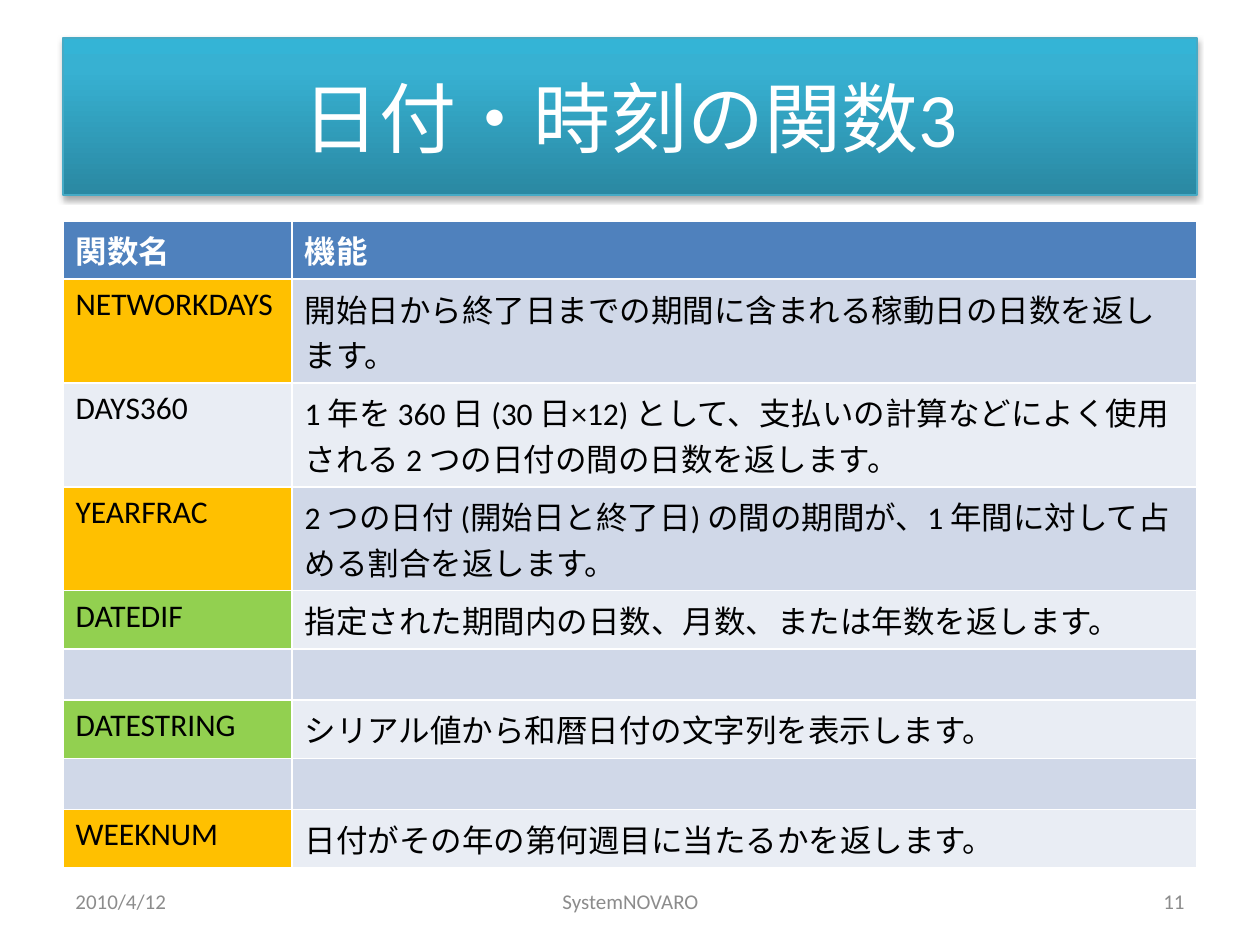
import copy

import pptx
import pptx.dml.color
import pptx.enum.text
import pptx.oxml
import pptx.oxml.ns
import pptx.util

PX = 914400 // 126
FONT = "Calibri"
ALIGN = pptx.enum.text.PP_ALIGN
MIDDLE = pptx.enum.text.MSO_ANCHOR.MIDDLE

COLORS = {
    "white": "FFFFFF",
    "black": "000000",
    "header": "4F81BD",
    "band_dark": "D0D8E8",
    "band_light": "E9EDF4",
    "orange": "FFC000",
    "green": "92D050",
    "title_line": "46AAC5",
    "footer": "8C8C8C",
}
TITLE_GRADIENT = [(0, "2A88A2"), (0.8, "37B1D2"), (1, "34B4D6")]

HEADINGS = ("関数名", "機能")
# Function name, description, colour of the name cell (None follows the band)
FUNCTIONS = [
    ("NETWORKDAYS", "開始日から終了日までの期間に含まれる稼動日の日数を返します。", "orange"),
    ("DAYS360", "1 年を 360 日 (30 日×12) として、支払いの計算などによく使用される "
                "2 つの日付の間の日数を返します。", None),
    ("YEARFRAC", "2 つの日付 (開始日と終了日) の間の期間が、1 年間に対して占める割合を返します。", "orange"),
    ("DATEDIF", "指定された期間内の日数、月数、または年数を返します。", "green"),
    ("", "", None),
    ("DATESTRING", "シリアル値から和暦日付の文字列を表示します。", "green"),
    ("", "", None),
    ("WEEKNUM", "日付がその年の第何週目に当たるかを返します。", "orange"),
]
FOOTERS = [
    ("2010/4/12", 63, 294, ALIGN.LEFT),
    ("SystemNOVARO", 431, 399, ALIGN.CENTER),
    ("11", 903, 294, ALIGN.RIGHT),
]


def px(length):
    return pptx.util.Emu(length * PX)


def rgb(name):
    return pptx.dml.color.RGBColor.from_string(COLORS[name])


def style_paragraph(paragraph, size, color, align=ALIGN.LEFT, bold=False):
    paragraph.alignment = align
    paragraph.font.name = FONT
    paragraph.font.size = pptx.util.Pt(size)
    paragraph.font.bold = bold
    paragraph.font.color.rgb = rgb(color)


def fill_title_gradient(title):
    """Give the title a three-stop gradient that runs from bottom to top."""
    title.fill.gradient()
    title.fill.gradient_angle = 90
    stop_list = title.fill.gradient_stops[0]._gs.getparent()
    stop_list.append(copy.deepcopy(stop_list[-1]))
    for stop, (position, color) in zip(title.fill.gradient_stops, TITLE_GRADIENT):
        stop.position = position
        stop.color.rgb = pptx.dml.color.RGBColor.from_string(color)


def add_drop_shadow(shape):
    shape.shadow.inherit = False
    effects = shape._element.spPr.find(pptx.oxml.ns.qn("a:effectLst"))
    effects.append(pptx.oxml.parse_xml(
        f'<a:outerShdw {pptx.oxml.ns.nsdecls("a")} blurRad="40000" dist="23000" '
        'dir="5400000" rotWithShape="0"><a:srgbClr val="000000">'
        '<a:alpha val="35000"/></a:srgbClr></a:outerShdw>'))


def format_title(title):
    title.left, title.top, title.width, title.height = map(px, (63, 38, 1134, 157))
    fill_title_gradient(title)
    title.line.color.rgb = rgb("title_line")
    title.line.width = pptx.util.Pt(0.75)
    add_drop_shadow(title)
    title.text_frame.text = "日付・時刻の関数3"
    title.text_frame.vertical_anchor = MIDDLE
    style_paragraph(title.text_frame.paragraphs[0], 44, "white", ALIGN.CENTER)


def fill_cell(cell, text, fill, color="black", bold=False):
    cell.text = text
    cell.fill.solid()
    cell.fill.fore_color.rgb = rgb(fill)
    style_paragraph(cell.text_frame.paragraphs[0], 18, color, bold=bold)


def add_function_table(slide):
    row_count = len(FUNCTIONS) + 1
    row_height = 51
    table = slide.shapes.add_table(row_count, 2, px(63), px(221), px(1134),
                                   px(row_height * row_count)).table
    for column, width in zip(table.columns, (229, 905)):
        column.width = px(width)
    for column, heading in enumerate(HEADINGS):
        fill_cell(table.cell(0, column), heading, "header", "white", bold=True)
    for row, (name, description, highlight) in enumerate(FUNCTIONS, start=1):
        band = "band_dark" if row % 2 else "band_light"
        fill_cell(table.cell(row, 0), name, highlight or band)
        fill_cell(table.cell(row, 1), description, band)


def add_footer(slide, text, left, width, align):
    frame = slide.shapes.add_textbox(px(left), px(876), px(width), px(50)).text_frame
    frame.word_wrap = True
    frame.vertical_anchor = MIDDLE
    frame.text = text
    style_paragraph(frame.paragraphs[0], 12, "footer", align)


def main():
    presentation = pptx.Presentation()
    presentation.slide_width = px(1260)
    presentation.slide_height = px(945)
    slide = presentation.slides.add_slide(
        presentation.slide_layouts.get_by_name("Title Only"))
    format_title(slide.shapes.title)
    add_function_table(slide)
    for footer in FOOTERS:
        add_footer(slide, *footer)
    presentation.save("out.pptx")


if __name__ == "__main__":
    main()
